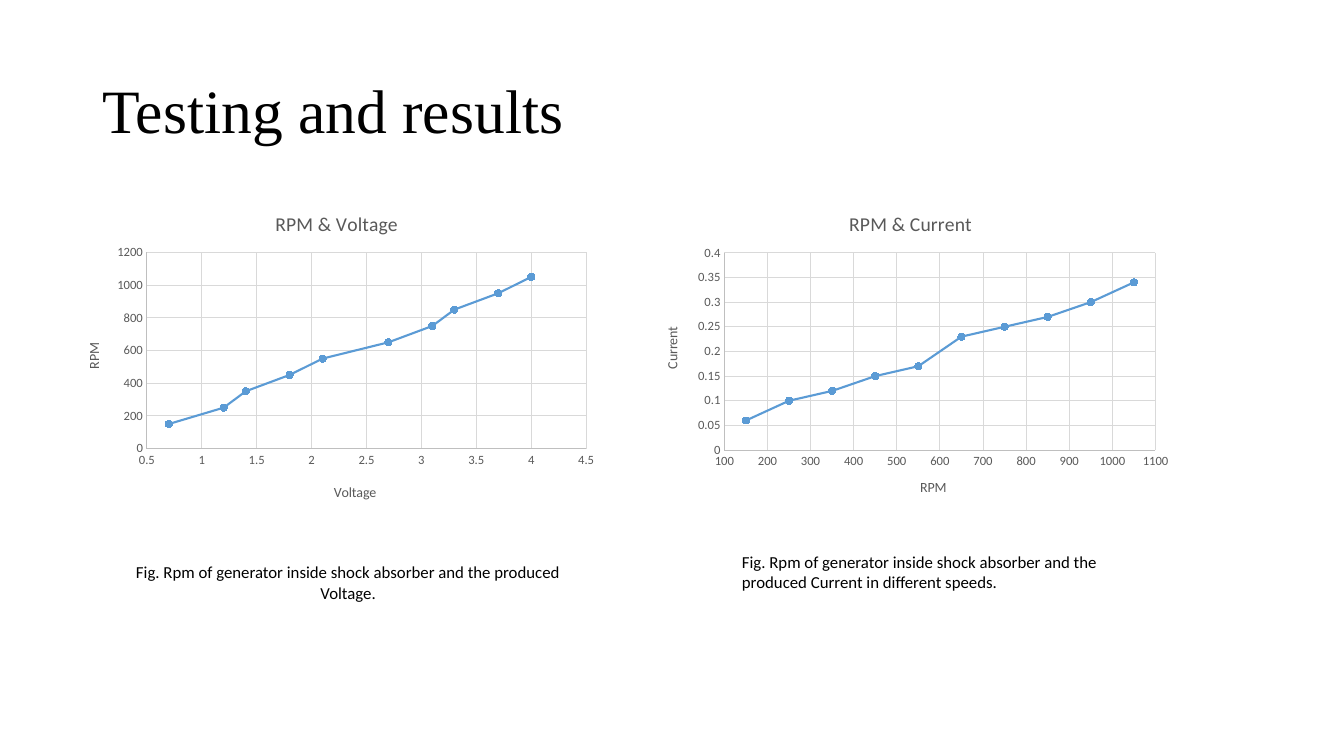
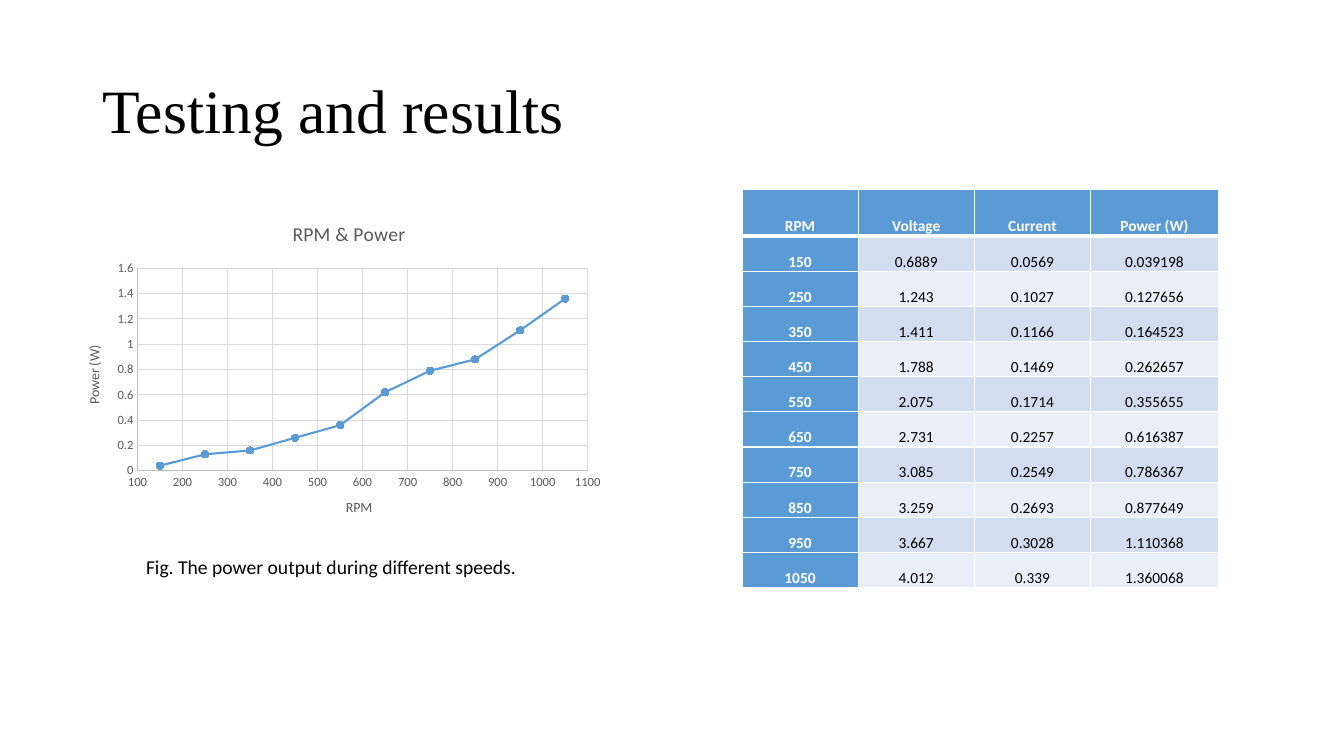
"""Build two slides of generator test results with charts and a table."""
from lxml import etree
from pptx import Presentation
from pptx.chart.data import XyChartData
from pptx.dml.color import RGBColor
from pptx.enum.chart import XL_CHART_TYPE, XL_MARKER_STYLE, XL_TICK_MARK
from pptx.enum.text import MSO_ANCHOR, MSO_AUTO_SIZE, PP_ALIGN
from pptx.oxml.ns import qn
from pptx.util import Pt

SCATTER = XL_CHART_TYPE.XY_SCATTER_LINES
CIRCLE = XL_MARKER_STYLE.CIRCLE
NO_TICK = XL_TICK_MARK.NONE
LEFT, CENTER = PP_ALIGN.LEFT, PP_ALIGN.CENTER
MIDDLE, BOTTOM = MSO_ANCHOR.MIDDLE, MSO_ANCHOR.BOTTOM
NO_FIT, GROW = MSO_AUTO_SIZE.NONE, MSO_AUTO_SIZE.SHAPE_TO_FIT_TEXT

COLORS = {
    "text": "000000", "white": "FFFFFF", "accent": "5B9BD5", "label": "595959",
    "axis": "BFBFBF", "grid": "D9D9D9", "odd_row": "D2DEEF", "even_row": "EAEFF7",
}
BODY_FONT, TITLE_FONT = "Calibri", "Times New Roman"

TITLE = "Testing and results"
TITLE_BOX = (66, 28.8, 828, 104.4)

HEADINGS = ["RPM", "Voltage", "Current", "Power (W)"]
CHART_DECIMALS = [0, 1, 2, 2]
READINGS = [
    ("150", "0.6889", "0.0569", "0.039198"),
    ("250", "1.243", "0.1027", "0.127656"),
    ("350", "1.411", "0.1166", "0.164523"),
    ("450", "1.788", "0.1469", "0.262657"),
    ("550", "2.075", "0.1714", "0.355655"),
    ("650", "2.731", "0.2257", "0.616387"),
    ("750", "3.085", "0.2549", "0.786367"),
    ("850", "3.259", "0.2693", "0.877649"),
    ("950", "3.667", "0.3028", "1.110368"),
    ("1050", "4.012", "0.339", "1.360068"),
]
RPM_SCALE = (100, 1100, 100)

VOLTAGE_CHART = {
    "title": "RPM & Voltage", "box": (46.8, 139, 387.4, 229.7),
    "x": "Voltage", "x_scale": (0.5, 4.5, 0.5), "x_place": (0.49, 0.89),
    "y": "RPM", "y_scale": (0, 1200, 200), "plot": (0.15, 0.18, 0.81, 0.61),
}
CURRENT_CHART = {
    "title": "RPM & Current", "box": (460.4, 139, 380.2, 231.1),
    "x": "RPM", "x_scale": RPM_SCALE,
    "y": "Current", "y_scale": (0, 0.4, 0.05), "y_place": (0.03, 0.4),
    "plot": (0.15, 0.18, 0.81, 0.61),
}
POWER_CHART = {
    "title": "RPM & Power", "box": (55.6, 146.5, 387.5, 226),
    "x": "RPM", "x_scale": RPM_SCALE,
    "y": "Power (W)", "y_scale": (0, 1.6, 0.2), "plot": (0.11, 0.2, 0.83, 0.64),
}
VOLTAGE_CAPTION = {
    "text": "Fig. Rpm of generator inside shock absorber and the produced Voltage.",
    "box": (80.6, 396.5, 336.2, 37.4), "size": 12,
    "align": CENTER, "spacing": 1.07, "after": 8,
}
CURRENT_CAPTION = {
    "text": "Fig. Rpm of generator inside shock absorber and the produced Current "
            "in different speeds.",
    "box": (522.9, 390.6, 285.1, 36), "size": 12,
}
POWER_CAPTION = {
    "text": "Fig. The power output during different speeds.",
    "box": (97.2, 393.1, 334.8, 24.5), "size": 14,
}
SLIDES = [
    {"charts": [VOLTAGE_CHART, CURRENT_CHART],
     "captions": [VOLTAGE_CAPTION, CURRENT_CAPTION]},
    {"charts": [POWER_CHART], "captions": [POWER_CAPTION], "table": True},
]

TABLE_CORNER = (530, 135.4)
COLUMN_WIDTHS = (83, 83, 83, 91.2)
HEADER_HEIGHT, ROW_HEIGHT = 33.2, 25.14


def color(name):
    return RGBColor.from_string(COLORS[name])


def points(values):
    return [Pt(value) for value in values]


def style_font(font, size, color_name, name=BODY_FONT, bold=False):
    font.size, font.name, font.bold = Pt(size), name, bold
    font.color.rgb = color(color_name)


def style_line(line, color_name, width):
    line.color.rgb = color(color_name)
    line.width = Pt(width)


def set_title(slide):
    title = slide.shapes.title
    title.left, title.top, title.width, title.height = points(TITLE_BOX)
    frame = title.text_frame
    frame.text = TITLE
    frame.word_wrap, frame.auto_size, frame.vertical_anchor = True, NO_FIT, MIDDLE
    paragraph = frame.paragraphs[0]
    paragraph.alignment, paragraph.line_spacing = LEFT, 0.9
    style_font(paragraph.runs[0].font, 44, "text", TITLE_FONT)


def add_caption(slide, caption):
    frame = slide.shapes.add_textbox(*points(caption["box"])).text_frame
    frame.text = caption["text"]
    frame.word_wrap, frame.auto_size = True, GROW
    paragraph = frame.paragraphs[0]
    paragraph.alignment = caption.get("align", LEFT)
    paragraph.line_spacing = caption.get("spacing", 1.0)
    paragraph.space_after = Pt(caption.get("after", 0))
    style_font(paragraph.runs[0].font, caption["size"], "text")


def place_part(part, fractions, position=0, target=None):
    layout = part.find(qn("c:layout"))
    if layout is None:
        layout = etree.Element(qn("c:layout"))
        part.insert(position, layout)
    manual = etree.SubElement(layout, qn("c:manualLayout"))
    settings = [("layoutTarget", target)] if target else []
    settings += [("xMode", "edge"), ("yMode", "edge"), *zip("xywh", fractions)]
    for tag, value in settings:
        etree.SubElement(manual, qn("c:" + tag)).set("val", str(value))


def set_heading(owner, text, size):
    owner.text_frame.text = text
    style_font(owner.text_frame.paragraphs[0].runs[0].font, size, "label")


def style_axis(axis, content, key):
    axis.minimum_scale, axis.maximum_scale, axis.major_unit = content[key + "_scale"]
    axis.major_tick_mark = axis.minor_tick_mark = NO_TICK
    axis.has_major_gridlines = True
    style_line(axis.major_gridlines.format.line, "grid", 0.75)
    style_line(axis.format.line, "axis", 0.75)
    style_font(axis.tick_labels.font, 9, "label")
    set_heading(axis.axis_title, content[key], 10)
    if key + "_place" in content:
        place_part(axis.axis_title.element, content[key + "_place"], position=1)


def add_scatter(slide, content):
    data = XyChartData()
    data_series = data.add_series("Series 1")
    columns = [HEADINGS.index(content[key]) for key in "xy"]
    for reading in READINGS:
        data_series.add_data_point(
            *(round(float(reading[column]), CHART_DECIMALS[column]) for column in columns))
    chart = slide.shapes.add_chart(SCATTER, *points(content["box"]), data).chart
    chart.has_legend = False
    style_font(chart.font, 10, "text")
    set_heading(chart.chart_title, content["title"], 14)
    style_axis(chart.category_axis, content, "x")
    style_axis(chart.value_axis, content, "y")
    body = chart.value_axis.axis_title.element.find(".//" + qn("a:bodyPr"))
    body.set("rot", "-5400000")
    body.set("vert", "horz")
    plot_area = chart.element.find(".//" + qn("c:plotArea"))
    place_part(plot_area, content["plot"], target="inner")
    plot = chart.plots[0]
    plot.vary_by_categories = False
    series = plot.series[0]
    style_line(series.format.line, "accent", 1.5)
    marker = series.marker
    marker.style, marker.size = CIRCLE, 5
    marker.format.fill.solid()
    marker.format.fill.fore_color.rgb = color("accent")
    style_line(marker.format.line, "accent", 0.75)


def set_borders(cell, row):
    widths = {"lnL": 1, "lnR": 1, "lnT": 3 if row == 1 else 1, "lnB": 3 if row == 0 else 1}
    properties = cell._tc.get_or_add_tcPr()
    for tag, width in widths.items():
        line = etree.SubElement(properties, qn("a:" + tag), w=str(Pt(width)))
        fill = etree.SubElement(line, qn("a:solidFill"))
        etree.SubElement(fill, qn("a:srgbClr"), val=COLORS["white"])


def fill_cell(cell, text, row, column):
    is_heading = row == 0 or column == 0
    band = "odd_row" if row % 2 else "even_row"
    set_borders(cell, row)
    cell.fill.solid()
    cell.fill.fore_color.rgb = color("accent" if is_heading else band)
    cell.margin_left = cell.margin_right = Pt(5)
    cell.margin_top = cell.margin_bottom = Pt(0)
    cell.vertical_anchor = BOTTOM
    cell.text_frame.text = text
    paragraph = cell.text_frame.paragraphs[0]
    paragraph.alignment, paragraph.line_spacing = CENTER, 1.07
    style_font(paragraph.runs[0].font, 11, "white" if is_heading else "text", bold=is_heading)


def add_readings_table(slide):
    rows = [HEADINGS, *READINGS]
    heights = [HEADER_HEIGHT] + [ROW_HEIGHT] * len(READINGS)
    size = (sum(COLUMN_WIDTHS), sum(heights))
    table = slide.shapes.add_table(
        len(rows), len(HEADINGS), *points(TABLE_CORNER + size)).table
    for column, width in zip(table.columns, COLUMN_WIDTHS):
        column.width = Pt(width)
    for row_index, (values, height) in enumerate(zip(rows, heights)):
        table.rows[row_index].height = Pt(height)
        for column_index, text in enumerate(values):
            fill_cell(table.cell(row_index, column_index), text, row_index, column_index)


def main():
    presentation = Presentation()
    presentation.slide_width, presentation.slide_height = Pt(960), Pt(540)
    for content in SLIDES:
        slide = presentation.slides.add_slide(presentation.slide_layouts[5])
        set_title(slide)
        for chart, caption in zip(content["charts"], content["captions"]):
            add_scatter(slide, chart)
            add_caption(slide, caption)
        if content.get("table"):
            add_readings_table(slide)
    presentation.save("out.pptx")


if __name__ == "__main__":
    main()
